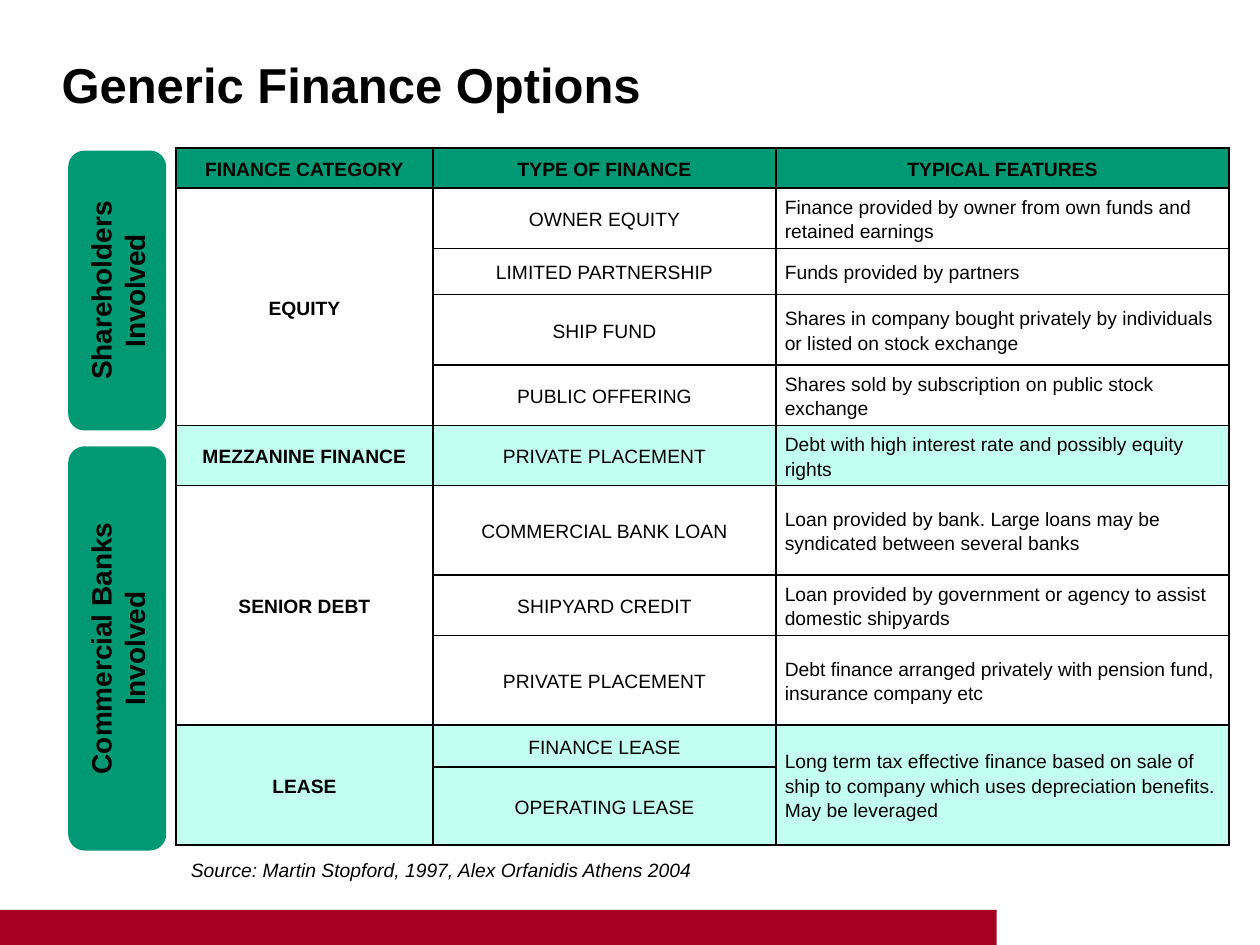
from pptx import Presentation
from pptx.dml.color import RGBColor
from pptx.enum.shapes import MSO_SHAPE
from pptx.enum.text import MSO_ANCHOR, PP_ALIGN
from pptx.oxml import parse_xml
from pptx.oxml.ns import nsdecls
from pptx.util import Pt

RECT, ROUNDED = MSO_SHAPE.RECTANGLE, MSO_SHAPE.ROUNDED_RECTANGLE
MIDDLE = MSO_ANCHOR.MIDDLE
LEFT, CENTER = PP_ALIGN.LEFT, PP_ALIGN.CENTER
BLACK = RGBColor(0x00, 0x00, 0x00)
GREEN = RGBColor(0x00, 0x99, 0x73)
MINT = RGBColor(0xC2, 0xFF, 0xF0)
RED = RGBColor(0xA5, 0x00, 0x21)

COLUMNS = [147, 196, 259]
HEADER_HEIGHT = 23
HEADERS = ["FINANCE CATEGORY", "TYPE OF FINANCE", "TYPICAL FEATURES"]
CATEGORIES = [
    ("EQUITY", None, [
        ("OWNER EQUITY", 34.4, "Finance provided by owner from own funds and retained earnings"),
        ("LIMITED PARTNERSHIP", 26.4, "Funds provided by partners"),
        ("SHIP FUND", 40.4,
         "Shares in company bought privately by individuals or listed on stock exchange"),
        ("PUBLIC OFFERING", 34.4, "Shares sold by subscription on public stock exchange"),
    ]),
    ("MEZZANINE FINANCE", MINT, [
        ("PRIVATE PLACEMENT", 34.4, "Debt with high interest rate and possibly equity rights"),
    ]),
    ("SENIOR DEBT", None, [
        ("COMMERCIAL BANK LOAN", 51.2,
         "Loan provided by bank. Large loans may be syndicated between several banks"),
        ("SHIPYARD CREDIT", 34.4,
         "Loan provided by government or agency to assist domestic shipyards"),
        ("PRIVATE PLACEMENT", 51.2,
         "Debt finance arranged privately with pension fund, insurance company etc"),
    ]),
    ("LEASE", MINT, [
        ("FINANCE LEASE", 24,
         "Long term tax effective finance based on sale of ship to company "
         "which uses depreciation benefits. May be leveraged"),
        ("OPERATING LEASE", 44.6, None),
    ]),
]


def write(tf, text, size, align=LEFT, **styles):
    """Put one formatted paragraph in a text frame and return it."""
    p = tf.paragraphs[0]
    p.alignment = align
    r = p.add_run()
    r.text = text
    r.font.color.rgb = BLACK
    for name, value in {"name": "Arial", "size": Pt(size), **styles}.items():
        setattr(r.font, name, value)
    return p


def add_block(s, kind, box, color):
    """Add a plain filled shape."""
    sp = s.shapes.add_shape(kind, *map(Pt, box))
    sp.shadow.inherit = False
    sp.fill.solid()
    sp.fill.fore_color.rgb = color
    sp.line.fill.background()
    return sp


def add_source(s, box, text):
    """Add the source line below the table."""
    tf = s.shapes.add_textbox(*map(Pt, box)).text_frame
    tf.word_wrap = True
    write(tf, text, 11, italic=True)


def add_title(s, box, text):
    """Place and fill the title placeholder."""
    sp = s.shapes.title
    sp.left, sp.top, sp.width, sp.height = map(Pt, box)
    sp.text_frame.vertical_anchor = MIDDLE
    write(sp.text_frame, text, 28, bold=True)


def add_side_tab(s, box, text):
    """Add a rounded tab that reads upwards within an upright box."""
    x, y, w, h = box
    turned = (x + (w - h) / 2, y + (h - w) / 2, h, w)
    sp = add_block(s, ROUNDED, turned, GREEN)
    sp.rotation = 270
    sp.text_frame.word_wrap = True
    sp.text_frame.vertical_anchor = MIDDLE
    write(sp.text_frame, text, 16, CENTER, bold=True)


def format_cell(cell, fill):
    """Set the borders, margins and fill of a cell."""
    tcPr = cell._tc.get_or_add_tcPr()
    for side in "LRTB":
        tcPr.append(parse_xml(
            f'<a:ln{side} {nsdecls("a")} w="{Pt(1)}"><a:solidFill>'
            f'<a:srgbClr val="{BLACK}"/></a:solidFill></a:ln{side}>'))
    margins = {"margin_left": 5, "margin_right": 5, "margin_top": 0, "margin_bottom": 0}
    for name, value in margins.items():
        setattr(cell, name, Pt(value))
    cell.vertical_anchor = MIDDLE
    if fill is None:
        cell.fill.background()
    else:
        cell.fill.solid()
        cell.fill.fore_color.rgb = fill


def write_cell(cell, text, align=CENTER, bold=False):
    """Write the text of a cell."""
    write(cell.text_frame, text, 11, align, bold=bold).line_spacing = 1.15


def add_finance_table(s, x, y):
    """Add the table of finance options, grouped by category."""
    heights = [HEADER_HEIGHT] + [h for _, _, kinds in CATEGORIES for _, h, _ in kinds]
    fills = [GREEN] + [fill for _, fill, kinds in CATEGORIES for _ in kinds]
    size = (sum(COLUMNS), sum(heights))
    frame = s.shapes.add_table(len(heights), len(COLUMNS), *map(Pt, (x, y, *size)))
    table = frame.table
    table.first_row = table.horz_banding = False
    for column, width in zip(table.columns, COLUMNS):
        column.width = Pt(width)
    for row, height, fill in zip(table.rows, heights, fills):
        row.height = Pt(height)
        for cell in row.cells:
            format_cell(cell, fill)
    for i, text in enumerate(HEADERS):
        write_cell(table.cell(0, i), text, bold=True)
    top = 1
    for category, _, kinds in CATEGORIES:
        last = top + len(kinds) - 1
        if last > top:
            table.cell(top, 0).merge(table.cell(last, 0))
        write_cell(table.cell(top, 0), category, bold=True)
        for i, (kind, _, feature) in enumerate(kinds, top):
            write_cell(table.cell(i, 1), kind)
            if feature is None:
                table.cell(i - 1, 2).merge(table.cell(i, 2))
            else:
                write_cell(table.cell(i, 2), feature, LEFT)
        top = last + 1


def main():
    """Build the slide and save it."""
    prs = Presentation()
    prs.slide_width, prs.slide_height = Pt(720), Pt(540)
    s = prs.slides.add_slide(prs.slide_layouts[5])
    add_block(s, RECT, (0, 520, 569.5, 20), RED)
    add_finance_table(s, 100.5, 84.5)
    add_side_tab(s, (39, 255, 56, 231), "Commercial Banks Involved")
    add_side_tab(s, (39, 86, 56, 160), "Shareholders Involved")
    add_source(s, (102, 487, 559, 21),
               "Source: Martin Stopford, 1997, Alex Orfanidis Athens 2004")
    add_title(s, (28, 18, 660, 60), "Generic Finance Options")
    prs.save("out.pptx")


if __name__ == "__main__":
    main()
